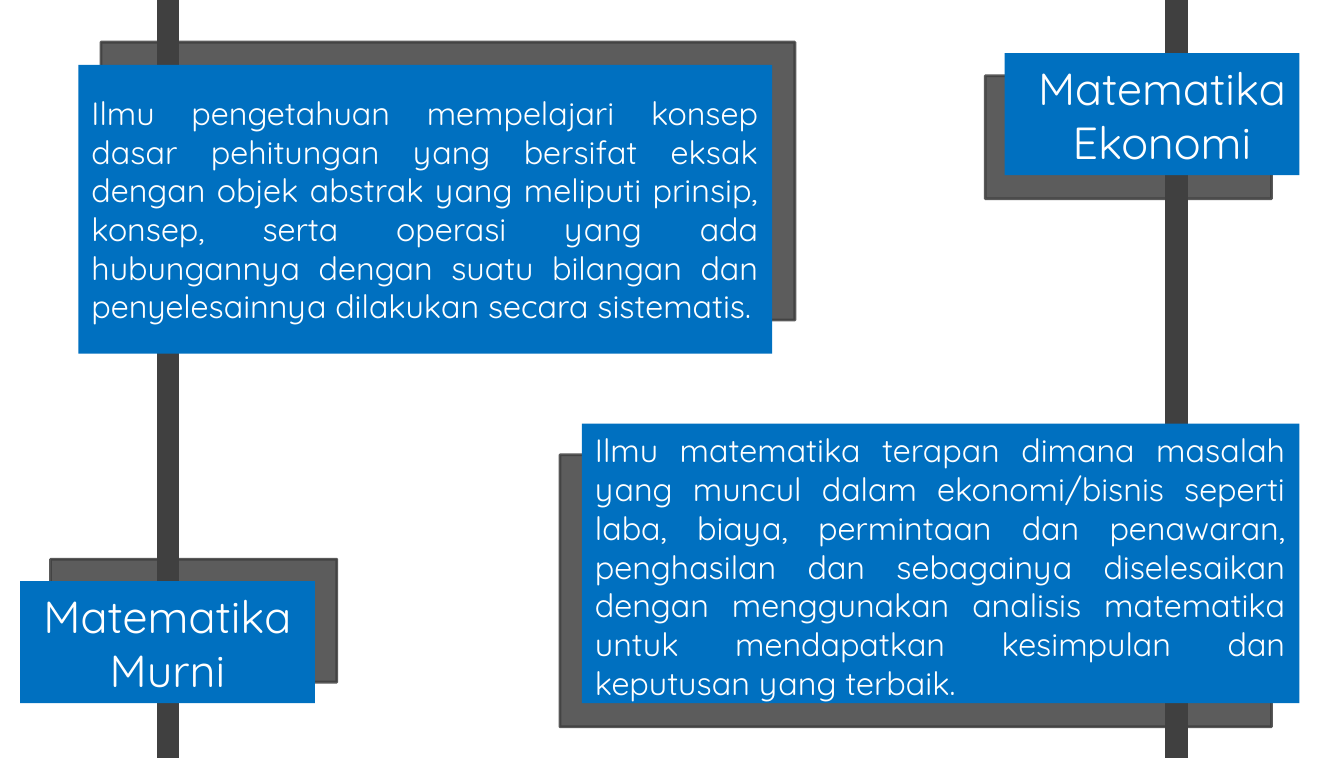
import pptx
import pptx.util
import pptx.dml.color
import pptx.enum.shapes
import pptx.enum.text
import pptx.oxml
import pptx.oxml.ns

BLUE = pptx.dml.color.RGBColor(0x00, 0x70, 0xC0)
GREY = pptx.dml.color.RGBColor(0x40, 0x40, 0x40)
WHITE = pptx.dml.color.RGBColor(0xFF, 0xFF, 0xFF)
ALIGN = pptx.enum.text.PP_ALIGN
ANCHOR = pptx.enum.text.MSO_ANCHOR
AUTO_SIZE = pptx.enum.text.MSO_AUTO_SIZE

ROWS = 45  # square grid cells, six to the inch


class Board:
    """Holds the style and the current slide; lengths are grid cells."""

    font_name = "Quicksand"
    label_size = 32
    body_size = 23

    def __init__(self, presentation):
        self.cell = presentation.slide_height / ROWS
        self.slide = presentation.slides.add_slide(presentation.slide_layouts[6])

    def lengths(self, *cells):
        return [pptx.util.Emu(round(count * self.cell)) for count in cells]

    def make_translucent(self, fill):
        color = fill._xPr.find(".//" + pptx.oxml.ns.qn("a:srgbClr"))
        alpha = pptx.oxml.parse_xml(
            "<a:alpha %s val='85000'/>" % pptx.oxml.ns.nsdecls("a"))
        color.append(alpha)

    def backing(self, *box):
        shape = self.slide.shapes.add_shape(
            pptx.enum.shapes.MSO_SHAPE.RECTANGLE, *self.lengths(*box))
        shape.shadow.inherit = False
        shape.line.width = pptx.util.Pt(2)
        for fill in (shape.fill, shape.line.fill):
            fill.solid()
            fill.fore_color.rgb = GREY
            self.make_translucent(fill)

    def pole(self, column):
        line = self.slide.shapes.add_connector(
            pptx.enum.shapes.MSO_CONNECTOR.STRAIGHT,
            *self.lengths(column, 0, column, ROWS))
        line.line.color.rgb = GREY
        line.line.width = pptx.util.Pt(16)
        line._element.spPr.append(pptx.oxml.parse_xml(
            "<a:effectLst %s/>" % pptx.oxml.ns.nsdecls("a")))

    def panel(self, box, lines, size, wrap=True, anchor=ANCHOR.TOP, space=0):
        shape = self.slide.shapes.add_textbox(*self.lengths(*box))
        shape.fill.solid()
        shape.fill.fore_color.rgb = BLUE
        frame = shape.text_frame
        frame.word_wrap = wrap
        frame.auto_size = AUTO_SIZE.NONE if wrap else AUTO_SIZE.SHAPE_TO_FIT_TEXT
        frame.vertical_anchor = anchor
        frame.margin_left = frame.margin_right = pptx.util.Inches(0.13)
        frame.margin_top = frame.margin_bottom = pptx.util.Inches(0.07)
        frame.text = "\n".join(text for text, _ in lines)
        for paragraph, (_, alignment) in zip(frame.paragraphs, lines):
            paragraph.alignment = alignment
            paragraph.space_before = pptx.util.Pt(space)
            paragraph.font.name = self.font_name
            paragraph.font.size = pptx.util.Pt(size)
            paragraph.font.color.rgb = WHITE

    def label(self, column, row, *lines):
        self.panel((column, row, 17.5, 7.25), lines, self.label_size, wrap=False)

    def body(self, box, text, **options):
        self.panel(box, [(text, ALIGN.JUSTIFY)], self.body_size, **options)


def main():
    presentation = pptx.Presentation()
    presentation.slide_width = pptx.util.Inches(13.3)
    presentation.slide_height = pptx.util.Inches(7.5)
    board = Board(presentation)

    # Left pole: pure mathematics
    board.backing(3, 33.2, 17, 7.3)
    board.pole(9.97)
    board.label(1.2, 34.5, ("Matematika", ALIGN.CENTER), ("Murni", ALIGN.CENTER))
    board.backing(6, 2.5, 41.2, 16.5)
    board.body(
        (4.65, 3.85, 41.2, 17.15),
        "Ilmu pengetahuan mempelajari konsep dasar pehitungan yang bersifat "
        "eksak dengan objek abstrak yang meliputi prinsip, konsep, serta "
        "operasi yang ada hubungannya dengan suatu bilangan dan "
        "penyelesainnya dilakukan secara sistematis.",
        anchor=ANCHOR.MIDDLE)

    # Right pole: mathematics for economics
    board.backing(58.5, 4.5, 17, 7.3)
    board.pole(69.85)
    board.label(59.65, 3.15, ("Matematika", ALIGN.RIGHT), ("Ekonomi", ALIGN.CENTER))
    board.backing(33.25, 27, 42.25, 16.15)
    board.body(
        (34.55, 25.15, 42.6, 16.6),
        "Ilmu matematika terapan dimana masalah yang muncul dalam "
        "ekonomi/bisnis seperti laba, biaya, permintaan dan penawaran, "
        "penghasilan dan sebagainya diselesaikan dengan menggunakan analisis "
        "matematika untuk mendapatkan kesimpulan dan keputusan yang terbaik.",
        space=4.6)

    presentation.save("out.pptx")


if __name__ == "__main__":
    main()
